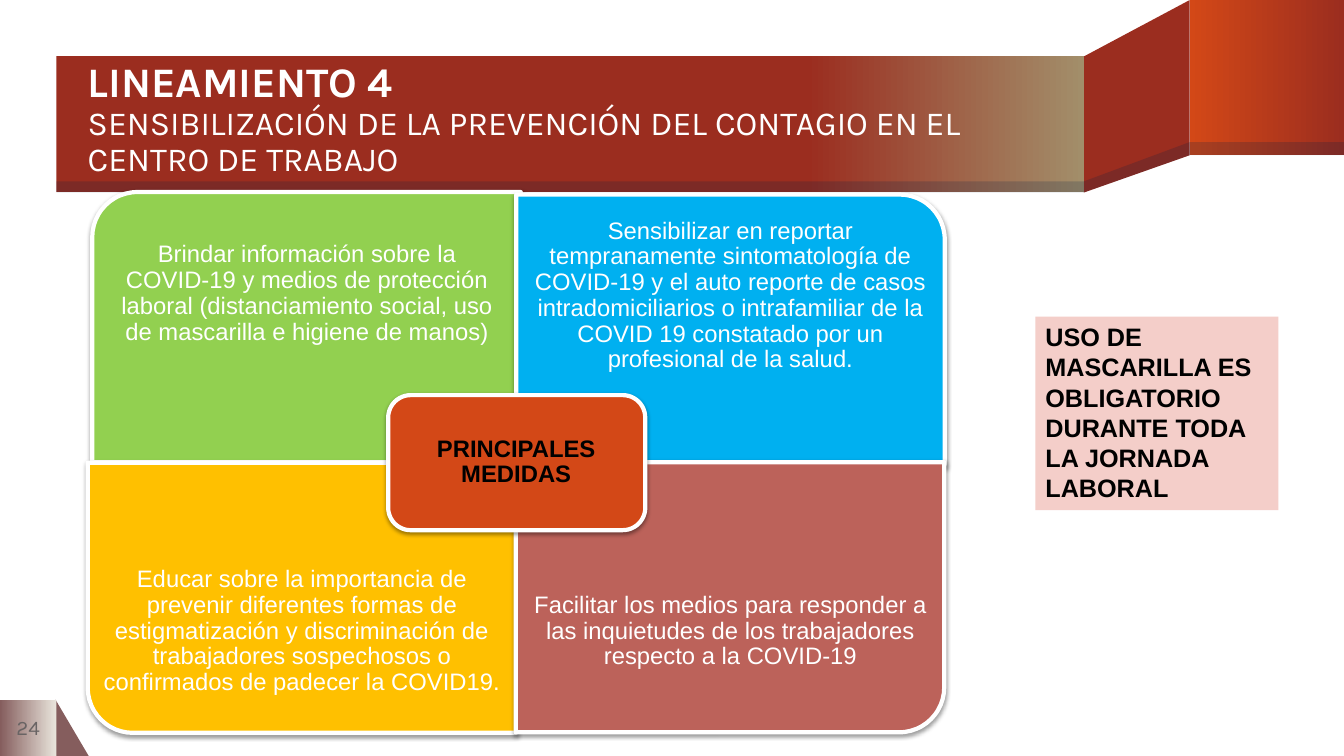
from lxml import etree
from pptx import Presentation
from pptx import util as u
from pptx.dml.color import RGBColor
from pptx.enum import shapes, text
from pptx.oxml.ns import qn

PX = 9144  # EMU per px, 100 px to the inch

WHITE = RGBColor(0xFF, 0xFF, 0xFF)
BLACK = RGBColor(0x00, 0x00, 0x00)
BRICK = RGBColor(0x9B, 0x2D, 0x1F)
ORANGE = RGBColor(0xD3, 0x48, 0x17)
SAND = RGBColor(0xA2, 0x8E, 0x6A)
NAVY = RGBColor(0x00, 0x1F, 0x46)
MAUVE = RGBColor(0x85, 0x5D, 0x5D)
CREAM = RGBColor(0xE9, 0xE5, 0xDC)
GRAY = RGBColor(0x69, 0x64, 0x64)
GREEN = RGBColor(0x92, 0xD0, 0x50)
BLUE = RGBColor(0x00, 0xB0, 0xF0)
YELLOW = RGBColor(0xFF, 0xC0, 0x00)
ROSE = RGBColor(0xBC, 0x62, 0x5A)
PINK = RGBColor(0xF4, 0xCE, 0xC9)

SHAPE = shapes.MSO_SHAPE
TILE_WIDTH, TILE_HEIGHT, TILE_TEXT_HEIGHT = 425, 268, 201

# Left, top, rotation, colour, text on top, wording
TILES = [
    (92, 191, 270, GREEN, True,
     "Brindar información sobre la COVID-19 y medios de protección laboral "
     "(distanciamiento social, uso de mascarilla e higiene de manos)"),
    (512, 193, 0, BLUE, True,
     "Sensibilizar en reportar tempranamente sintomatología de COVID-19 y el "
     "auto reporte de casos intradomiciliarios o intrafamiliar de la COVID 19 "
     "constatado por un profesional de la salud."),
    (87, 459, 180, YELLOW, False,
     "Educar sobre la importancia de prevenir diferentes formas de "
     "estigmatización y discriminación de trabajadores sospechosos o "
     "confirmados de padecer la COVID19."),
    (512, 459, 90, ROSE, False,
     "Facilitar los medios para responder a las inquietudes de los "
     "trabajadores respecto a la COVID-19"),
]


def px(*lengths):
    return [u.Emu(length * PX) for length in lengths]


def set_attributes(target, values):
    for name, value in values.items():
        setattr(target, name, value)


def paint(shape, color, alpha=None):
    shape.shadow.inherit = False
    shape.line.fill.background()
    shape.fill.solid()
    shape.fill.fore_color.rgb = color
    if alpha:
        rgb = shape._element.spPr.find(".//" + qn("a:srgbClr"))
        etree.SubElement(rgb, qn("a:alpha"), val=str(alpha * 1000))


def add_block(slide, kind, box, color, alpha=None):
    shape = slide.shapes.add_shape(kind, *px(*box))
    paint(shape, color, alpha)
    return shape


def add_gradient_block(slide, box, stops):
    shape = add_block(slide, SHAPE.RECTANGLE, box, stops[0][1])
    shape.fill.gradient()
    shape.fill.gradient_angle = 0
    stop_list = shape._element.spPr.find(".//" + qn("a:gsLst"))
    stop_list.clear()
    for position, color in stops:
        stop = etree.SubElement(stop_list, qn("a:gs"), pos=str(position * 1000))
        etree.SubElement(stop, qn("a:srgbClr"), val=str(color))


def add_polygon(slide, points, color, alpha=None):
    builder = slide.shapes.build_freeform(*points[0], scale=PX)
    builder.add_line_segments(points[1:], close=True)
    paint(builder.convert_to_shape(), color, alpha)


def add_card(slide, kind, box, color, rotation=0):
    """Block with a white outline and a soft shadow below."""
    shape = add_block(slide, kind, box, color)
    shape.rotation = rotation
    shape.line.width = u.Pt(3)
    shape.line.color.rgb = WHITE
    effects = shape._element.spPr.find(qn("a:effectLst"))
    shadow = etree.SubElement(effects, qn("a:outerShdw"), blurRad=str(u.Pt(3.1)),
                              dist=str(u.Pt(1.6)), dir="5400000", rotWithShape="0")
    rgb = etree.SubElement(shadow, qn("a:srgbClr"), val=str(BLACK))
    etree.SubElement(rgb, qn("a:alpha"), val="38000")


def write(shape, runs, align=text.PP_ALIGN.CENTER, margins=(0, 0), spacing=0.9,
          anchor=text.MSO_ANCHOR.MIDDLE):
    """Fill a shape with one paragraph; runs are split by line breaks."""
    side, end = px(*margins)
    frame = shape.text_frame
    set_attributes(frame, {
        "word_wrap": True, "auto_size": text.MSO_AUTO_SIZE.NONE,
        "vertical_anchor": anchor, "margin_left": side, "margin_right": side,
        "margin_top": end, "margin_bottom": end})
    paragraph = frame.paragraphs[0]
    set_attributes(paragraph, {"alignment": align, "line_spacing": spacing})
    for index, (words, font, size, color, bold) in enumerate(runs):
        if index:
            paragraph.add_line_break()
        run = paragraph.add_run()
        run.text = words
        set_attributes(run.font, {"name": font, "size": u.Pt(size), "bold": bold})
        run.font.color.rgb = color


def add_label(slide, box, run, **layout):
    write(slide.shapes.add_textbox(*px(*box)), [run], **layout)


def add_ribbon(slide):
    add_polygon(slide, [(1180, 0), (1075, 56), (1075, 191), (1180, 154)], BRICK)
    add_gradient_block(slide, (1180, 0, 154, 154), [(0, ORANGE), (100, BRICK)])
    add_gradient_block(slide, (56, 56, 1019, 135),
                       [(0, BRICK), (73, BRICK), (100, SAND)])
    # Darker lower edge
    add_polygon(slide, [(1180, 141), (1075, 180), (1075, 191), (1180, 154)], NAVY, 20)
    add_block(slide, SHAPE.RECTANGLE, (1180, 141, 154, 13), NAVY, 20)
    add_block(slide, SHAPE.RECTANGLE, (56, 180, 1019, 11), NAVY, 20)


def add_title(slide):
    title = slide.shapes.title
    set_attributes(title, dict(zip(("left", "top", "width", "height"),
                                   px(87, 52, 985, 134))))
    write(title, [
        ("LINEAMIENTO 4", "Karla", 30, WHITE, True),
        ("SENSIBILIZACIÓN DE LA PREVENCIÓN DEL CONTAGIO EN EL CENTRO DE TRABAJO",
         "Karla", 24, WHITE, False)], align=text.PP_ALIGN.LEFT)
    slide.shapes._spTree.append(title._element)  # in front of the ribbon


def add_tile(slide, left, top, rotation, color, text_on_top, words):
    width, height = TILE_WIDTH, TILE_HEIGHT
    if rotation % 180:  # a quarter turn swaps the sides about the centre
        width, height = height, width
    box = (left + (TILE_WIDTH - width) // 2, top + (TILE_HEIGHT - height) // 2,
           width, height)
    add_card(slide, SHAPE.ROUND_1_RECTANGLE, box, color, rotation)
    text_top = top if text_on_top else top + TILE_HEIGHT - TILE_TEXT_HEIGHT
    add_label(slide, (left, text_top, TILE_WIDTH, TILE_TEXT_HEIGHT),
              (words, "Arial", 17, WHITE, False), margins=(13, 13))


def main():
    presentation = Presentation()
    width, height = px(1333, 750)
    set_attributes(presentation, {"slide_width": width, "slide_height": height})
    slide = presentation.slides.add_slide(presentation.slide_layouts[5])

    # Page number corner
    add_block(slide, SHAPE.RIGHT_TRIANGLE, (55, 694, 33, 56), MAUVE)
    add_gradient_block(slide, (0, 694, 56, 56), [(0, MAUVE), (100, CREAM)])
    add_label(slide, (0, 694, 56, 56), ("24", "Karla", 14.7, GRAY, False),
              spacing=1.0)

    # Heading
    add_ribbon(slide)
    add_title(slide)

    # Four measures around the centre
    for tile in TILES:
        add_tile(slide, *tile)
    add_card(slide, SHAPE.ROUNDED_RECTANGLE, (385, 392, 255, 134), ORANGE)
    add_label(slide, (391, 398, 242, 121),
              ("PRINCIPALES MEDIDAS", "Arial", 17, BLACK, True), margins=(7, 7))

    # Side note
    note = add_block(slide, SHAPE.RECTANGLE, (1027, 314, 241, 192), PINK)
    write(note, [("USO DE MASCARILLA ES OBLIGATORIO DURANTE TODA LA JORNADA LABORAL",
                  "Arial", 18, BLACK, True)], align=text.PP_ALIGN.LEFT,
          margins=(10, 5), spacing=1.0, anchor=text.MSO_ANCHOR.TOP)

    presentation.save("out.pptx")


if __name__ == "__main__":
    main()
